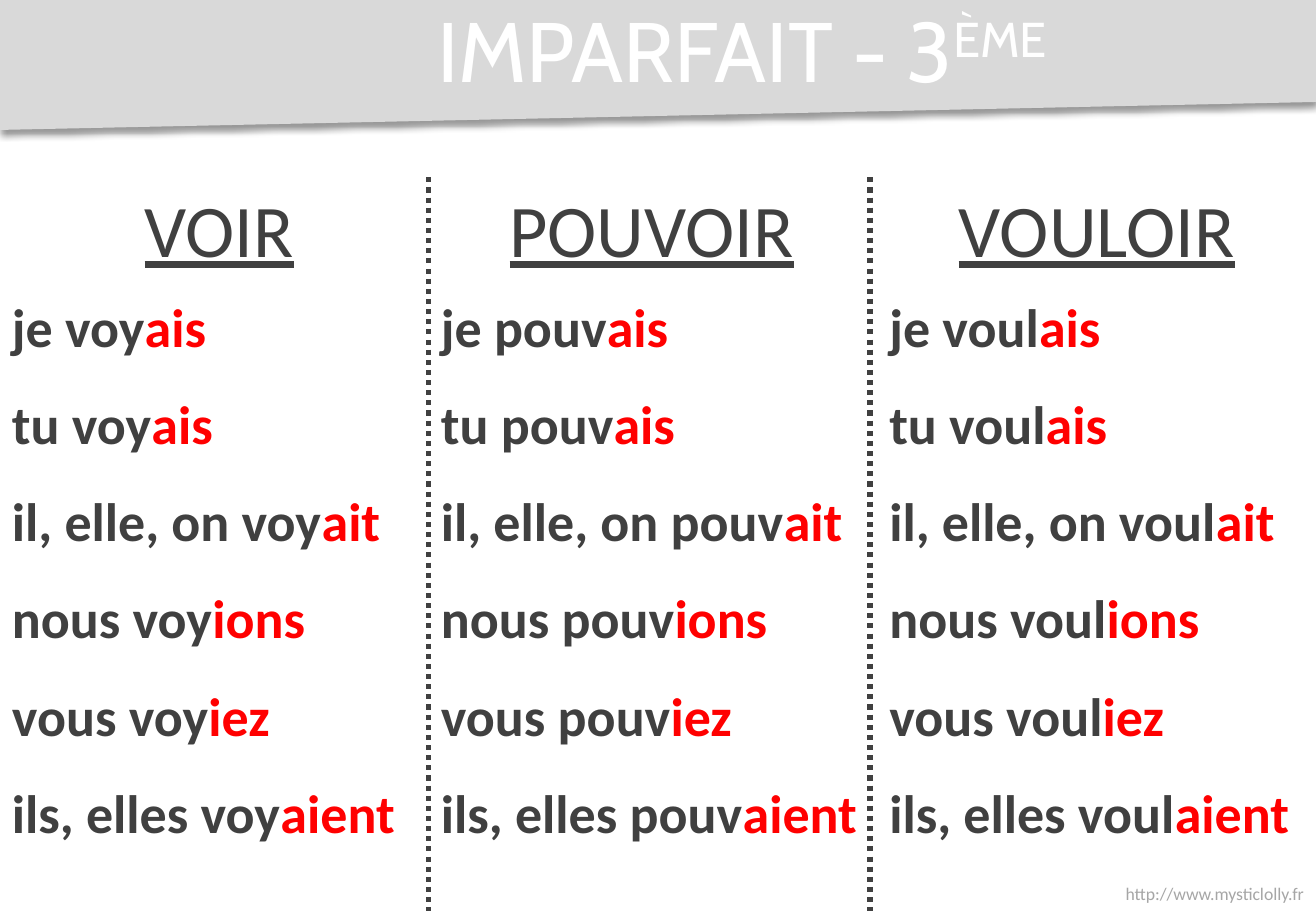
from lxml import etree
from pptx import Presentation, util as u
from pptx.dml.color import RGBColor
from pptx.enum import dml, text
from pptx.oxml import parse_xml
from pptx.oxml.ns import nsdecls, qn

WIDTH, HEIGHT = 10.83, 7.5
COLUMN = WIDTH / 3
TOP = 1.46
COLORS = {"band": "D9D9D9", "title": "FFFFFF", "ink": "404040",
          "ending": "FF0000", "footer": "A6A6A6"}
PRONOUNS = ["je", "tu", "il, elle, on", "nous", "vous", "ils, elles"]
ENDINGS = ["ais", "ais", "ait", "ions", "iez", "aient"]
# Verb, stem, left of heading, left and width of the forms
VERBS = [("VOIR", "voy", 0, 0, COLUMN),
         ("POUVOIR", "pouv", 3.56, 3.53, 3.71),
         ("VOULOIR", "voul", 2 * COLUMN, 2 * COLUMN, COLUMN)]
DIVIDERS = [3.53, 7.16]
SHADOW = (f'<a:outerShdw {nsdecls("a")} blurRad="50800" dist="38100" '
          'dir="5400000" algn="t" rotWithShape="0"><a:srgbClr val="000000">'
          '<a:alpha val="40000"/></a:srgbClr></a:outerShdw>')


def add_text(page, box, lines, align="LEFT", anchor="TOP", spacing=1.0, **font):
    """Each line is a list of (words, colour name) pairs."""
    frame = page.shapes.add_textbox(*map(u.Inches, box)).text_frame
    frame.word_wrap = True
    frame.vertical_anchor = getattr(text.MSO_ANCHOR, anchor)
    for index, line in enumerate(lines):
        para = frame.add_paragraph() if index else frame.paragraphs[0]
        para.alignment = getattr(text.PP_ALIGN, align)
        para.line_spacing = spacing
        for words, color in line:
            span = para.add_run()
            span.text = words
            span.font.color.rgb = RGBColor.from_string(COLORS[color])
            for name, value in ({"name": "Calibri"} | font).items():
                setattr(span.font, name, value)
    return frame


def add_banner(page, left, top, width, height):
    # Slanted band with a soft shadow below
    builder = page.shapes.build_freeform(u.Inches(left), u.Inches(top))
    corners = [(width, 0), (width, 0.84), (0, height)]
    builder.add_line_segments(
        [(u.Inches(left + x), u.Inches(top + y)) for x, y in corners])
    band = builder.convert_to_shape()
    band.fill.solid()
    band.fill.fore_color.rgb = RGBColor.from_string(COLORS["band"])
    band.line.fill.background()
    band.shadow.inherit = False
    band._element.spPr.find(qn("a:effectLst")).append(parse_xml(SHADOW))

    # Title with a raised ordinal ending
    frame = add_text(page, (left + 1.48, top - 0.02, width - 1.48, 0.85),
                     [[("IMPARFAIT - 3", "title"), ("ÈME ", "title")]],
                     "CENTER", "MIDDLE", name="Cabin", size=u.Pt(50))
    ordinal = frame.paragraphs[0].runs[1]
    ordinal._r.get_or_add_rPr().set("baseline", "30000")


def add_verb(page, verb, stem, heading_left, left, width, top):
    add_text(page, (heading_left, top, COLUMN, 0.84), [[(verb, "ink")]],
             "CENTER", size=u.Pt(44), underline=True)
    forms = [[(f"{pronoun} {stem}", "ink"), (ending, "ending")]
             for pronoun, ending in zip(PRONOUNS, ENDINGS)]
    add_text(page, (left, top + 0.64, width, 4.95), forms,
             spacing=1.5, size=u.Pt(32), bold=True)


def add_divider(page, x, top, bottom):
    line = page.shapes.add_connector(
        1, *map(u.Inches, (x, top, x, bottom)))
    line.line.color.rgb = RGBColor.from_string(COLORS["ink"])
    line.line.width = u.Pt(3)
    line.line.dash_style = dml.MSO_LINE.ROUND_DOT
    etree.SubElement(line._element.spPr, qn("a:effectLst"))


def main():
    deck = Presentation()
    deck.slide_width, deck.slide_height = u.Inches(WIDTH), u.Inches(HEIGHT)
    page = deck.slides.add_slide(deck.slide_layouts[6])

    add_banner(page, 0, 0, WIDTH, 1.07)
    # Web address in the bottom right corner
    add_text(page, (WIDTH - 2.44, HEIGHT - 0.28, 2.44, 0.28),
             [[("http://www.mysticlolly.fr", "footer")]],
             "RIGHT", size=u.Pt(10.5))
    # Conjugation columns
    for verb in VERBS:
        add_verb(page, *verb, TOP)
    for x in DIVIDERS:
        add_divider(page, x, TOP, HEIGHT)
    deck.save("out.pptx")


if __name__ == "__main__":
    main()
